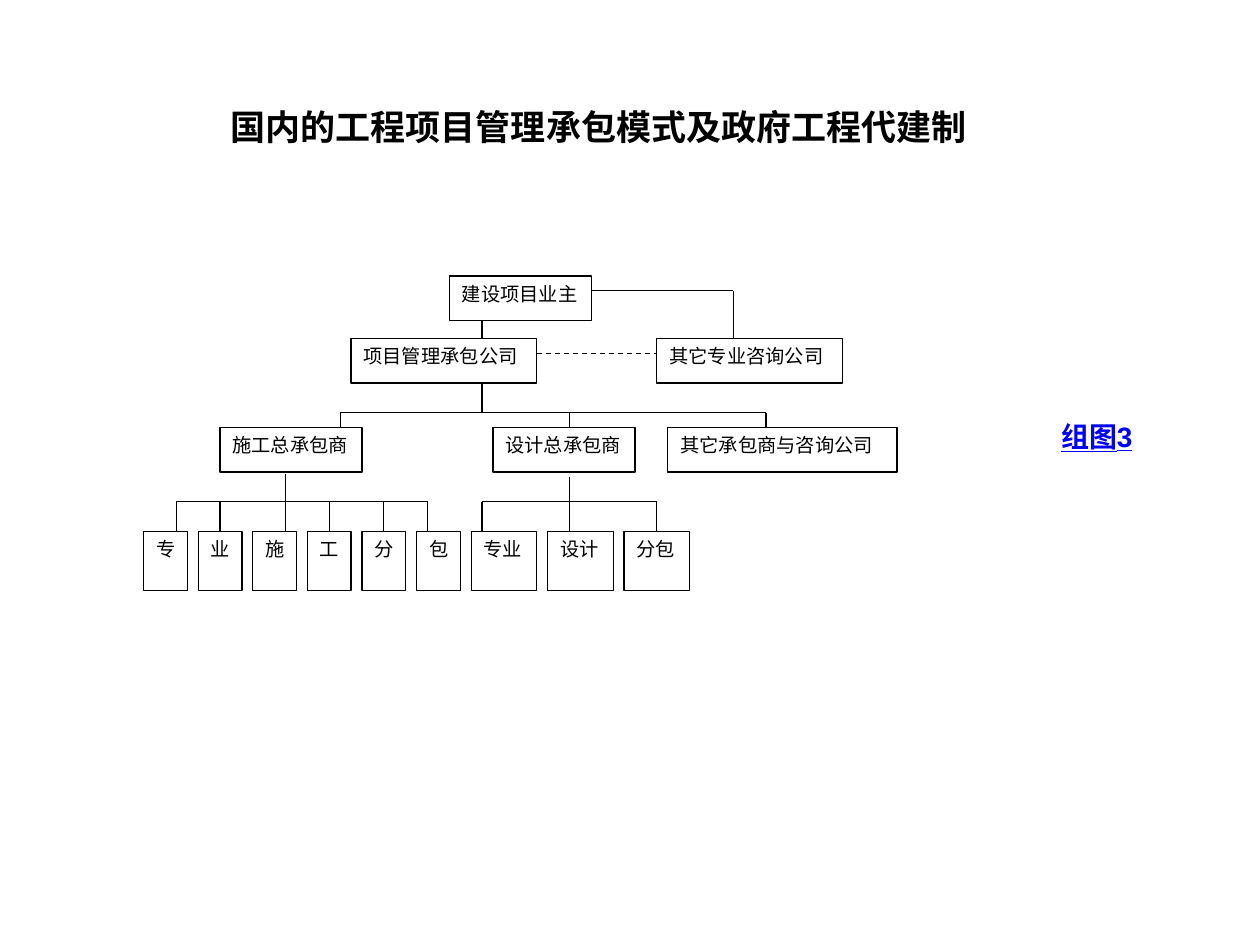
from pptx import Presentation
from pptx import util as u
from pptx.dml.color import RGBColor
from pptx.enum import dml, shapes, text
from pptx.oxml.ns import qn
from lxml import etree

BLACK = RGBColor(0, 0, 0)
WHITE = RGBColor(255, 255, 255)
BLUE = RGBColor(0, 0, 255)
CJK = "Noto Sans CJK SC"
COLS, ROWS = 69, 21.2
OWNER, MANAGER, GENERAL, SUB = 0, 4.2, 10.2, 17.2
BUS_1, BUS_2 = 9.2, 15.2

BOXES = [
    ("建设项目业主", 28, OWNER, 13, 3),
    ("项目管理承包公司", 19, MANAGER, 17, 3),
    ("其它专业咨询公司", 47, MANAGER, 17, 3),
    ("施工总承包商", 7, GENERAL, 13, 3),
    ("设计总承包商", 32, GENERAL, 13, 3),
    ("其它承包商与咨询公司", 48, GENERAL, 21, 3),
]
BOXES += [(c, 5 * i, SUB, 4, 4) for i, c in enumerate("专业施工分包")]
BOXES += [(t, 30 + 7 * i, SUB, 6, 4) for i, t in enumerate(("专业", "设计", "分包"))]

LINKS = [
    (31, 3, 31, MANAGER),
    (41, 1, 54, 1),
    (54, 1, 54, MANAGER),
    (31, 7.2, 31, BUS_1),
    (13, 13.3, 13, SUB),
    (39, 13.5, 39, SUB),
]
BRANCHES = [
    (BUS_1, GENERAL, (18, 39, 57)),
    (BUS_2, SUB, (3, 7, 17, 22, 26)),
    (BUS_2, SUB, (31, 47)),
]


def place(sp, box):
    """Move a shape into a box of left, top, width and height."""
    sp.left, sp.top, sp.width, sp.height = (u.Inches(v) for v in box)


def write(sp, words, size, align, color=BLACK, font=CJK, bold=False):
    """Fill a shape with one formatted paragraph."""
    tf = sp.text_frame
    tf.text = words
    tf.word_wrap = True
    tf.vertical_anchor = text.MSO_ANCHOR.TOP
    p = tf.paragraphs[0]
    p.alignment = align
    r = p.runs[0]
    r.font.size, r.font.name, r.font.bold = u.Pt(size), font, bold
    r.font.color.rgb = color
    etree.SubElement(r.font._element, qn("a:ea")).set("typeface", CJK)
    return tf


def add_title(s, box):
    """Set the slide heading in the title placeholder."""
    sp = s.shapes.title
    place(sp, box)
    sp.fill.solid()
    sp.fill.fore_color.rgb = WHITE
    tf = write(sp, "国内的工程项目管理承包模式及政府工程代建制", 20,
               text.PP_ALIGN.JUSTIFY, bold=True)
    tf.auto_size = text.MSO_AUTO_SIZE.NONE
    tf.margin_left = tf.margin_right = u.Inches(0.02)
    tf.margin_top = tf.margin_bottom = u.Inches(0.01)
    pPr = tf.paragraphs[0]._p.get_or_add_pPr()
    pPr.set("marL", str(u.Inches(0.5)))
    pPr.set("indent", "0")


def add_chart_box(group, words, box):
    """Draw one outlined box of the organisation chart."""
    sp = group.shapes.add_shape(shapes.MSO_SHAPE.RECTANGLE, 0, 0, 0, 0)
    place(sp, box)
    sp.shadow.inherit = False
    sp.fill.solid()
    sp.fill.fore_color.rgb = WHITE
    sp.line.color.rgb = BLACK
    sp.line.width = u.Pt(0.75)
    write(sp, words, 11, text.PP_ALIGN.JUSTIFY)


def add_link(group, ends):
    """Draw one thin straight line and return it."""
    sp = group.shapes.add_connector(shapes.MSO_CONNECTOR.STRAIGHT,
                                    *(u.Inches(v) for v in ends))
    sp.line.color.rgb = BLACK
    sp.line.width = u.Pt(0.75)
    etree.SubElement(sp._element.spPr, qn("a:effectLst"))
    return sp


def add_org_chart(s, box):
    """Lay out the contracting chart on a grid inside the box."""
    left, top, width, height = box
    col, row = width / COLS, height / ROWS
    group = s.shapes.add_group_shape()

    def link(x1, y1, x2, y2):
        """Join two grid points."""
        return add_link(group, (left + x1 * col, top + y1 * row,
                                left + x2 * col, top + y2 * row))

    for ends in LINKS:
        link(*ends)
    for bus, level, drops in BRANCHES:
        link(drops[0], bus, drops[-1], bus)
        for x in drops:
            link(x, bus, x, level)
    for words, x, y, w, h in BOXES:
        add_chart_box(group, words, (left + x * col, top + y * row, w * col, h * row))
    link(36, 5.2, 47, 5.2).line.dash_style = dml.MSO_LINE.DASH


def add_label(s, box):
    """Place the underlined figure label."""
    sp = s.shapes.add_textbox(0, 0, 0, 0)
    place(sp, box)
    tf = write(sp, "组图3", 16, text.PP_ALIGN.CENTER, BLUE, "Arial", True)
    tf.auto_size = text.MSO_AUTO_SIZE.SHAPE_TO_FIT_TEXT
    tf.paragraphs[0].runs[0].font.underline = True


def main():
    """Build and save the slide."""
    prs = Presentation()
    prs.slide_width, prs.slide_height = u.Inches(10), u.Inches(7.5)
    s = prs.slides.add_slide(prs.slide_layouts[5])
    add_title(s, (1.31, 0.83, 6.7, 0.84))
    add_org_chart(s, (1.14, 2.19, 5.98, 2.5))
    add_label(s, (8.15, 3.28, 1.11, 0.37))
    prs.save("out.pptx")


if __name__ == "__main__":
    main()
